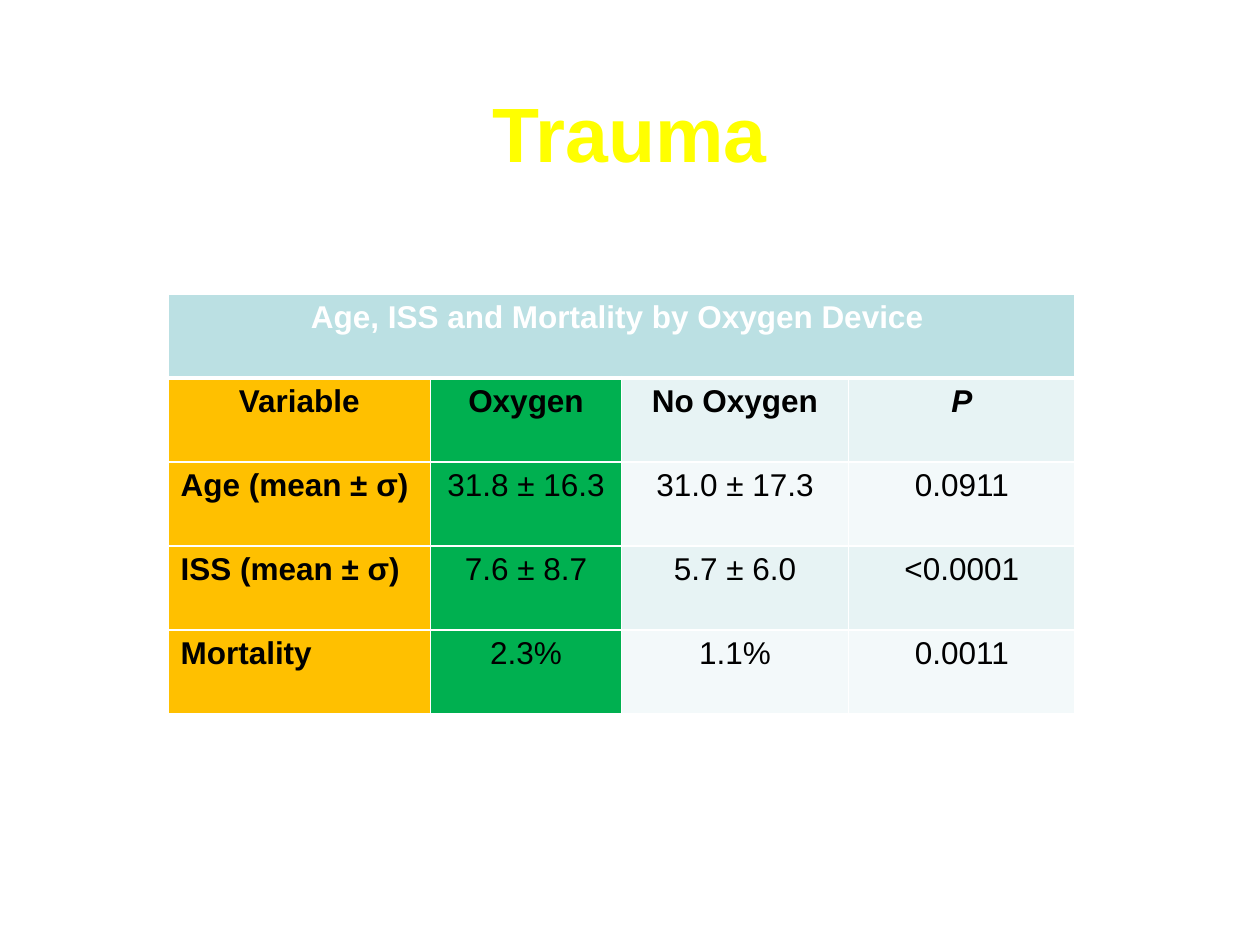
import pptx
import pptx.util
import pptx.dml.color
import pptx.enum.text
import pptx.oxml
import pptx.oxml.ns
from dataclasses import dataclass

Pt = pptx.util.Pt
RGB = pptx.dml.color.RGBColor.from_string
ALIGN = pptx.enum.text.PP_ALIGN
ANCHOR = pptx.enum.text.MSO_ANCHOR


@dataclass(frozen=True)
class Theme:
    """Colours, type sizes and font of the slide."""
    face: str = "Arial"
    head: int = 44
    body: int = 18
    title: str = "FFFF00"
    shade: str = "808080"
    ink: str = "000000"
    white: str = "FFFFFF"
    band: str = "BBE0E3"
    label: str = "FFC000"
    oxygen: str = "00B050"
    rows: tuple = ("E7F3F4", "F3F9FA")


THEME = Theme()
ROWS = [
    ["Variable", "Oxygen", "No Oxygen", "P"],
    ["Age (mean ± σ)", "31.8 ± 16.3", "31.0 ± 17.3", "0.0911"],
    ["ISS (mean ± σ)", "7.6 ± 8.7", "5.7 ± 6.0", "<0.0001"],
    ["Mortality", "2.3%", "1.1%", "0.0011"],
]


def style(font, tint, **form):
    """Set a font's colour and other format values."""
    for key, val in {"name": THEME.face, **form}.items():
        setattr(font, key, val)
    font.color.rgb = RGB(tint)


def write(frame, text, tint, align, **form):
    """Put one formatted run in a text frame."""
    para = frame.paragraphs[0]
    para.alignment = align
    run = para.add_run()
    run.text = text
    style(run.font, tint, **form)
    return run


def shadow(run):
    """Give a run a grey shadow down and to the right."""
    space = pptx.oxml.ns.nsdecls("a")
    fill = run.font.fill._xPr.find(pptx.oxml.ns.qn("a:solidFill"))
    fill.addnext(pptx.oxml.parse_xml(
        f'<a:effectLst {space}><a:outerShdw blurRad="38100" dist="38100" '
        f'dir="2700000"><a:srgbClr val="{THEME.shade}"/></a:outerShdw></a:effectLst>'))


def edge(cell, **sides):
    """Draw white borders, one width for each side."""
    space = pptx.oxml.ns.nsdecls("a")
    props = cell._tc.get_or_add_tcPr()
    for side, wide in sides.items():
        props.append(pptx.oxml.parse_xml(
            f'<a:ln{side} {space} w="{Pt(wide)}"><a:solidFill>'
            f'<a:srgbClr val="{THEME.white}"/></a:solidFill></a:ln{side}>'))


def paint(cell, tint):
    """Fill a cell with one colour."""
    cell.fill.solid()
    cell.fill.fore_color.rgb = RGB(tint)


def heading(slide, left, top, width, height):
    """Place the title in its box."""
    shape = slide.shapes.title
    box = {"left": left, "top": top, "width": width, "height": height}
    for key, val in box.items():
        setattr(shape, key, Pt(val))
    frame = shape.text_frame
    frame.vertical_anchor = ANCHOR.MIDDLE
    shadow(write(frame, "Trauma", THEME.title, ALIGN.CENTER,
                 size=Pt(THEME.head), bold=True))


def results(slide, left, top, width, height):
    """Place the table of results in its box."""
    count = len(ROWS) + 1
    table = slide.shapes.add_table(
        count, 4, Pt(left), Pt(top), Pt(width), Pt(height)).table
    last = width / 4
    for col, wide in zip(table.columns, (150, width - 150 - 2 * last, last, last)):
        col.width = Pt(wide)
    for row in table.rows:
        row.height = Pt(height / count)
    for r in range(count):
        for c in range(4):
            edge(table.cell(r, c), L=1, R=1, T=3 if r == 1 else 1,
                 B=3 if r == 0 else 1)
    band = table.cell(0, 0)
    band.merge(table.cell(0, 3))
    paint(band, THEME.band)
    write(band.text_frame, "Age, ISS and Mortality by Oxygen Device ",
          THEME.white, ALIGN.CENTER, size=Pt(THEME.body), bold=True)
    for r, row in enumerate(ROWS):
        plain = THEME.rows[r % 2]
        fills = (THEME.label, THEME.oxygen, plain, plain)
        for c, (text, fill) in enumerate(zip(row, fills)):
            cell = table.cell(r + 1, c)
            paint(cell, fill)
            align = ALIGN.LEFT if r and c == 0 else ALIGN.CENTER
            write(cell.text_frame, text, THEME.ink, align, size=Pt(THEME.body),
                  bold=r == 0 or c == 0, italic=text == "P")


def main():
    """Build and save the slide."""
    deck = pptx.Presentation()
    deck.slide_width, deck.slide_height = Pt(720), Pt(540)
    slide = deck.slides.add_slide(deck.slide_layouts[5])
    heading(slide, 36, 30, 648, 90)
    results(slide, 96, 168, 518.4, 240)
    deck.save("out.pptx")


if __name__ == "__main__":
    main()
